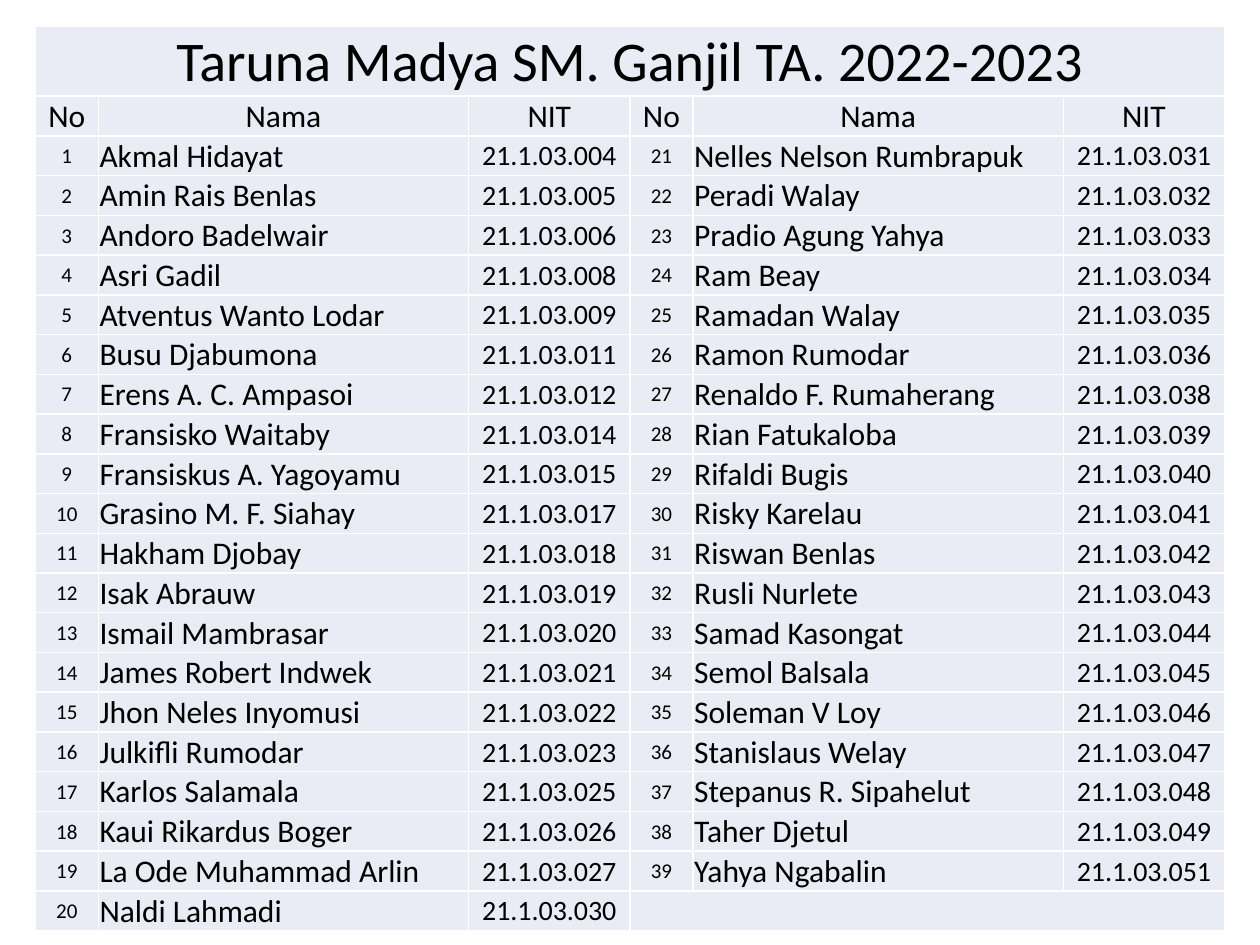
import lxml.etree
import pptx
import pptx.dml.color
import pptx.enum.text
import pptx.oxml.ns
import pptx.util

COLORS = {"cell": "E9EBF5", "border": "FFFFFF", "text": "000000"}
FONT = "Calibri"
CENTER = pptx.enum.text.PP_ALIGN.CENTER
LEFT = pptx.enum.text.PP_ALIGN.LEFT

TITLE = "Taruna Madya SM. Ganjil TA. 2022-2023"
HEADINGS = ["No", "Nama", "NIT"]
NIT_PREFIX = "21.1.03."
STUDENTS = [
    ("Akmal Hidayat", "004"), ("Amin Rais Benlas", "005"),
    ("Andoro Badelwair", "006"), ("Asri Gadil", "008"),
    ("Atventus Wanto Lodar", "009"), ("Busu Djabumona", "011"),
    ("Erens A. C. Ampasoi", "012"), ("Fransisko Waitaby", "014"),
    ("Fransiskus A. Yagoyamu", "015"), ("Grasino M. F. Siahay", "017"),
    ("Hakham Djobay", "018"), ("Isak Abrauw", "019"),
    ("Ismail Mambrasar", "020"), ("James Robert Indwek", "021"),
    ("Jhon Neles Inyomusi", "022"), ("Julkifli Rumodar", "023"),
    ("Karlos Salamala", "025"), ("Kaui Rikardus Boger", "026"),
    ("La Ode Muhammad Arlin", "027"), ("Naldi Lahmadi", "030"),
    ("Nelles Nelson Rumbrapuk", "031"), ("Peradi Walay", "032"),
    ("Pradio Agung Yahya", "033"), ("Ram Beay", "034"),
    ("Ramadan Walay", "035"), ("Ramon Rumodar", "036"),
    ("Renaldo F. Rumaherang", "038"), ("Rian Fatukaloba", "039"),
    ("Rifaldi Bugis", "040"), ("Risky Karelau", "041"),
    ("Riswan Benlas", "042"), ("Rusli Nurlete", "043"),
    ("Samad Kasongat", "044"), ("Semol Balsala", "045"),
    ("Soleman V Loy", "046"), ("Stanislaus Welay", "047"),
    ("Stepanus R. Sipahelut", "048"), ("Taher Djetul", "049"),
    ("Yahya Ngabalin", "051"),
]
PER_HALF = 20  # students listed in each half of the table
COLUMN_WIDTHS = [0.5, 2.94, 1.28] * 2
ROW_COUNT = PER_HALF + 2
TABLE_HEIGHT, TITLE_HEIGHT = 7.13, 0.54


def style_cell(cell):
    """Give a cell its borders, fill, margins and anchor."""
    properties = cell._tc.get_or_add_tcPr()
    for side in ("a:lnL", "a:lnR", "a:lnT", "a:lnB"):
        line = lxml.etree.SubElement(properties, pptx.oxml.ns.qn(side), w="12700")
        solid = lxml.etree.SubElement(line, pptx.oxml.ns.qn("a:solidFill"))
        lxml.etree.SubElement(solid, pptx.oxml.ns.qn("a:srgbClr"), val=COLORS["border"])
    cell.fill.solid()
    cell.fill.fore_color.rgb = pptx.dml.color.RGBColor.from_string(COLORS["cell"])
    cell.margin_left = cell.margin_right = cell.margin_top = pptx.util.Inches(0.01)
    cell.margin_bottom = 0
    cell.vertical_anchor = pptx.enum.text.MSO_ANCHOR.MIDDLE


def write_cell(cell, text, size, align=CENTER):
    paragraph = cell.text_frame.paragraphs[0]
    paragraph.alignment = align
    run = paragraph.add_run()
    run.text = text
    run.font.name = FONT
    run.font.size = pptx.util.Pt(size)
    run.font.color.rgb = pptx.dml.color.RGBColor.from_string(COLORS["text"])


prs = pptx.Presentation()
prs.slide_width = pptx.util.Inches(10)
prs.slide_height = pptx.util.Inches(7.5)
slide = prs.slides.add_slide(prs.slide_layouts[6])

# Table grid: a taller title row above equal rows
roster = slide.shapes.add_table(
    ROW_COUNT, len(COLUMN_WIDTHS), pptx.util.Inches(0.28), pptx.util.Inches(0.21),
    pptx.util.Inches(sum(COLUMN_WIDTHS)), pptx.util.Inches(TABLE_HEIGHT)).table
roster.first_row = roster.horz_banding = False
for column, width in zip(roster.columns, COLUMN_WIDTHS):
    column.width = pptx.util.Inches(width)
for row in roster.rows:
    row.height = pptx.util.Inches((TABLE_HEIGHT - TITLE_HEIGHT) / (ROW_COUNT - 1))
roster.rows[0].height = pptx.util.Inches(TITLE_HEIGHT)
for cell in roster.iter_cells():
    style_cell(cell)

# Title and headings
roster.cell(0, 0).merge(roster.cell(0, 5))
write_cell(roster.cell(0, 0), TITLE, 32)
for col, heading in enumerate(HEADINGS * 2):
    write_cell(roster.cell(1, col), heading, 18)

# Students, down the left half and then the right
for index, (name, nit) in enumerate(STUDENTS):
    half, line_number = divmod(index, PER_HALF)
    row, col = line_number + 2, half * len(HEADINGS)
    write_cell(roster.cell(row, col), str(index + 1), 12)
    write_cell(roster.cell(row, col + 1), name, 18, LEFT)
    write_cell(roster.cell(row, col + 2), NIT_PREFIX + nit, 16)

# Unused end of the right half
roster.cell(ROW_COUNT - 1, 3).merge(roster.cell(ROW_COUNT - 1, 5))
for cell in roster.iter_cells():
    if not cell.text_frame.text:
        lxml.etree.SubElement(cell.text_frame.paragraphs[0]._p,
                              pptx.oxml.ns.qn("a:endParaRPr"), sz="1200")

prs.save("out.pptx")
